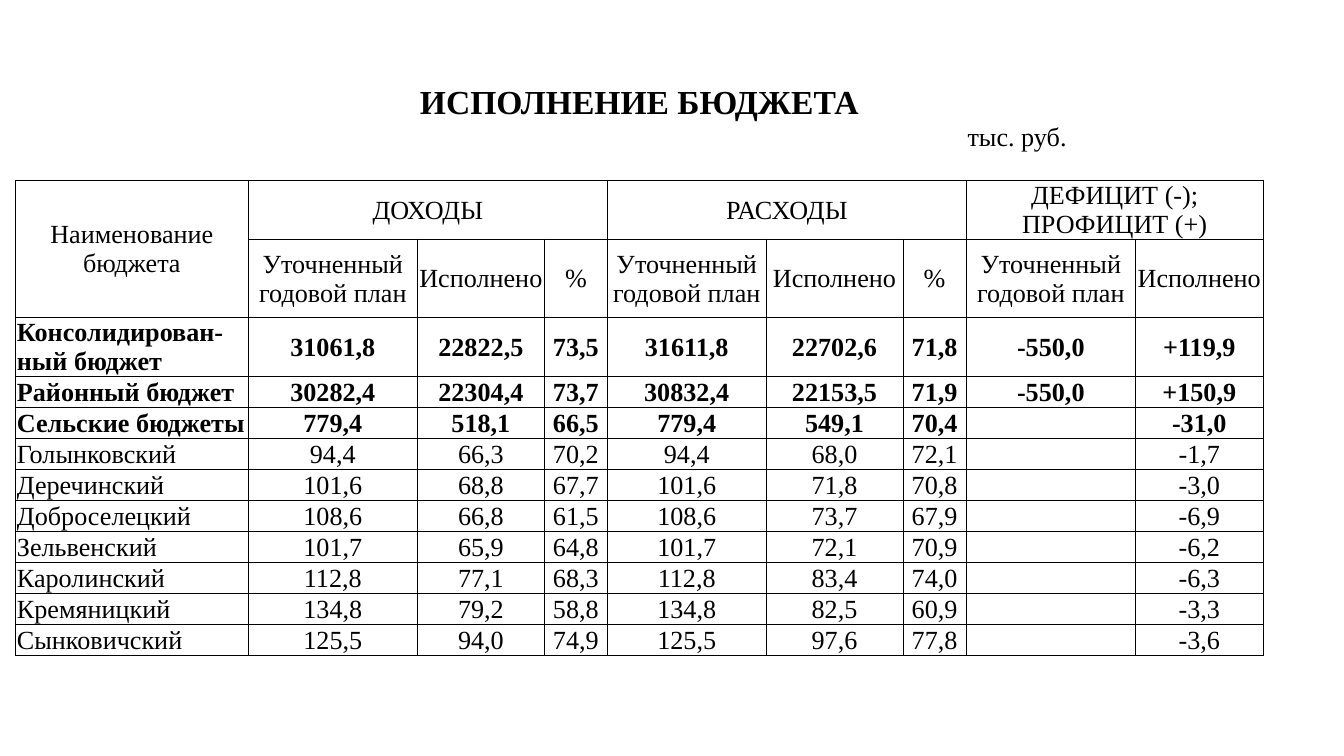
import pptx
import pptx.util
import pptx.dml.color
import pptx.enum.text
import lxml.etree
from pptx.oxml import parse_xml
from pptx.oxml.ns import nsdecls, qn

Pt = pptx.util.Pt
PP_ALIGN = pptx.enum.text.PP_ALIGN
ANCHOR = pptx.enum.text.MSO_ANCHOR


def rgb(value):
    return pptx.dml.color.RGBColor.from_string(value)


def add_border(cell, sides):
    for i, side in enumerate(sides):
        line = parse_xml(
            f'<a:ln{side} {nsdecls("a")} w="{Pt(0.5)}"><a:solidFill>'
            f'<a:srgbClr val="000000"/></a:solidFill></a:ln{side}>')
        cell._tc.get_or_add_tcPr().insert(i, line)


prs = pptx.Presentation()
prs.slide_width, prs.slide_height = Pt(720), Pt(405)
s = prs.slides.add_slide(prs.slide_layouts[6])

widths = [124.6, 72.7, 18, 47, 21, 33.8, 85, 15.1, 58.3, 6.5, 27.4, 90.7, 37.4, 31]
heights = [21.4, 31.2, 31, 41.8, 31.6] + [16.6] * 9
starts = [0, 1, 3, 5, 6, 7, 9, 11, 12]

plan, done = "Уточненный годовой план", "Исполнено"
texts = {
    (0, 0): "ИСПОЛНЕНИЕ БЮДЖЕТА",
    (1, 11): "тыс. руб.",
    (2, 0): "Наименование\nбюджета",
    (2, 1): "ДОХОДЫ",
    (2, 6): "РАСХОДЫ",
    (2, 11): "ДЕФИЦИТ (-); ПРОФИЦИТ (+)",
}
rows = [
    ["", plan, done, "%", plan, done, "%", plan, done],
    ["Консолидирован-ный бюджет", "31061,8", "22822,5", "73,5", "31611,8", "22702,6", "71,8", "-550,0", "+119,9"],
    ["Районный бюджет", "30282,4", "22304,4", "73,7", "30832,4", "22153,5", "71,9", "-550,0", "+150,9"],
    ["Сельские бюджеты", "779,4", "518,1", "66,5", "779,4", "549,1", "70,4", "", "-31,0"],
    ["Голынковский", "94,4", "66,3", "70,2", "94,4", "68,0", "72,1", "", "-1,7"],
    ["Деречинский", "101,6", "68,8", "67,7", "101,6", "71,8", "70,8", "", "-3,0"],
    ["Доброселецкий", "108,6", "66,8", "61,5", "108,6", "73,7", "67,9", "", "-6,9"],
    ["Зельвенский", "101,7", "65,9", "64,8", "101,7", "72,1", "70,9", "", "-6,2"],
    ["Каролинский", "112,8", "77,1", "68,3", "112,8", "83,4", "74,0", "", "-6,3"],
    ["Кремяницкий", "134,8", "79,2", "58,8", "134,8", "82,5", "60,9", "", "-3,3"],
    ["Сынковичский", "125,5", "94,0", "74,9", "125,5", "97,6", "77,8", "", "-3,6"],
]
for r, values in enumerate(rows, 3):
    for c, value in zip(starts, values):
        if value:
            texts[r, c] = value

table = s.shapes.add_table(
    len(heights), len(widths), Pt(8.4), Pt(44), Pt(sum(widths)), Pt(sum(heights))).table
table.first_row = table.horz_banding = False
table._tbl.tblPr.find(qn("a:tableStyleId")).text = "{2D5ABB26-0587-4C30-8999-92F81FD0307C}"
for column, width in zip(table.columns, widths):
    column.width = Pt(width)
for row, height in zip(table.rows, heights):
    row.height = Pt(height)

spans = [(0, 0, 0, 13), (2, 0, 3, 0), (2, 1, 2, 5), (2, 6, 2, 10), (2, 11, 2, 13)]
spans += [(1, c, 1, c + 1) for c in (2, 4, 6, 8, 11)]
spans += [(r, c, r, c + 1) for r in range(3, 14) for c in (1, 3, 7, 9, 12)]
for top, left, bottom, right in spans:
    table.cell(top, left).merge(table.cell(bottom, right))

for r in range(len(heights)):
    for c in range(len(widths)):
        cell = table.cell(r, c)
        cell.margin_left = cell.margin_right = cell.margin_top = Pt(0.7)
        cell.margin_bottom = Pt(0)
        cell.fill.background()
        if r >= 2:
            add_border(cell, "LRTB")
        elif r == 1:
            add_border(cell, "B")
        is_name = r >= 4 and c == 0
        cell.vertical_anchor = ANCHOR.BOTTOM if is_name else ANCHOR.TOP if r == 1 else ANCHOR.MIDDLE
        if (r, c) in texts:
            cell.text = texts[r, c]
        for p in cell.text_frame.paragraphs:
            p.alignment = PP_ALIGN.LEFT if is_name or r == 1 else PP_ALIGN.CENTER
            p.font.name = "Times New Roman"
            p.font.size = Pt(18 if r == 0 else 14)
            p.font.bold = r in (0, 4, 5, 6)
            p.font.color.rgb = rgb("000000")

prs.save("out.pptx")
